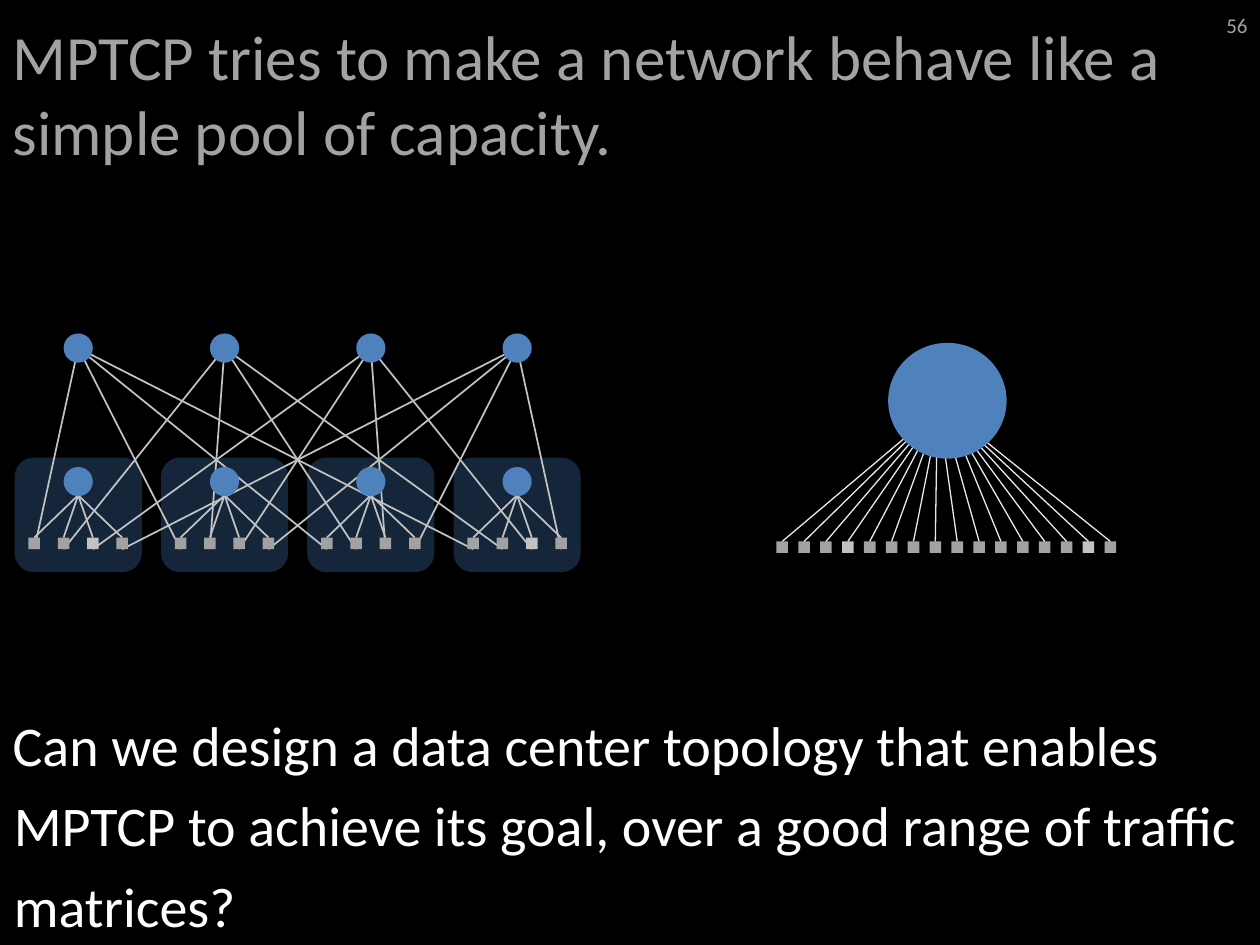
from pptx import Presentation
from pptx.dml.color import RGBColor
from pptx.enum.shapes import MSO_CONNECTOR, MSO_SHAPE
from pptx.enum.text import MSO_ANCHOR, MSO_AUTO_SIZE, PP_ALIGN
from pptx.oxml.ns import qn
from pptx.util import Pt
from lxml.etree import SubElement

# Content
TITLE = "MPTCP tries to make a network behave like a simple pool of capacity."
QUESTION = ("Can we design a data center topology that enables MPTCP to achieve "
            "its goal, over a good range of traffic matrices?")
NUMBER = "56"
PODS = CORES = HOSTS_PER_POD = 4
LIGHT_HOSTS = {(0, 2), (3, 2)}      # pod, host
LIGHT_POOL_HOSTS = {3, 14}
# Where the links of the pool meet: number of links, x, y
POOL_ENDS = [(7, 537.1, 233.3), (2, 535.7, 229), (1, 535.7, 224.6), (6, 541.4, 234.7)]

BLACK = RGBColor(0, 0, 0)
WHITE = RGBColor(0xFF, 0xFF, 0xFF)
GREY = RGBColor(0xA2, 0xA2, 0xA2)
LIGHT = RGBColor(0xC2, 0xC2, 0xC2)
PALE = RGBColor(0xE9, 0xE9, 0xE9)
BLUE = RGBColor(0x4F, 0x81, 0xBD)
NAVY = RGBColor(0x25, 0x40, 0x61)

# Geometry, in points
POD_X, POD_STEP, POD_W, POD_H, POD_Y = 44.7, 83.6, 72.7, 65.5, 294.2
HOST_STEP, HOST_SIZE, HOST_Y = 16.75, 6.6, 310.5
NODE_SIZE, CORE_Y, SWITCH_Y, SWITCH_FOOT = 16.7, 198.9, 275.2, 283
POOL_X, POOL_STEP, POOL_Y = 447, 12.5, 312.7

prs = Presentation()
prs.slide_width, prs.slide_height = Pt(720), Pt(540)
s = prs.slides.add_slide(prs.slide_layouts[1])
s.background.fill.solid()
s.background.fill.fore_color.rgb = BLACK


def write(sp, text, box, size, color, anchor=MSO_ANCHOR.MIDDLE, align=PP_ALIGN.LEFT):
    sp.left, sp.top, sp.width, sp.height = map(Pt, box)
    tf = sp.text_frame
    tf.word_wrap, tf.auto_size, tf.vertical_anchor = True, MSO_AUTO_SIZE.NONE, anchor
    p = tf.paragraphs[0]
    p.alignment = align
    r = p.add_run()
    r.text = text
    r.font.name, r.font.size, r.font.color.rgb = "Calibri", Pt(size), color
    return p


def mark(kind, x, y, w, h, color):
    """Draw a filled shape centred on x, y."""
    sp = s.shapes.add_shape(kind, Pt(x - w / 2), Pt(y - h / 2), Pt(w), Pt(h))
    sp.shadow.inherit = False
    sp.fill.solid()
    sp.fill.fore_color.rgb = color
    sp.line.fill.background()
    return sp


def link(x1, y1, x2, y2, color, width):
    c = s.shapes.add_connector(MSO_CONNECTOR.STRAIGHT, Pt(x1), Pt(y1), Pt(x2), Pt(y2))
    c.line.color.rgb, c.line.width = color, Pt(width)
    SubElement(c._element.spPr, qn("a:effectLst"))


# Title, question and slide number
write(s.shapes.title, TITLE, (0, 0, 720, 106), 36, GREY)
p = write(s.placeholders[1], QUESTION, (0, 349, 720, 191), 32, WHITE, MSO_ANCHOR.BOTTOM)
p.line_spacing, p.space_before = 1.2, Pt(16)
pPr = p._p.get_or_add_pPr()
pPr.set("marL", str(Pt(0.72)))
pPr.set("indent", str(-Pt(0.72)))
SubElement(pPr, qn("a:buNone"))
write(s.shapes.add_textbox(0, 0, 0, 0), NUMBER, (660, 0, 60, 29), 12, GREY,
      align=PP_ALIGN.RIGHT)

# Data center network: pods, links, switches, hosts
pod_x = [POD_X + i * POD_STEP for i in range(PODS)]
core_x = pod_x[:CORES]
hosts = [(pod, h, pod_x[pod] + (h - (HOSTS_PER_POD - 1) / 2) * HOST_STEP)
         for pod in range(PODS) for h in range(HOSTS_PER_POD)]

for x in pod_x:
    sp = mark(MSO_SHAPE.ROUNDED_RECTANGLE, x, POD_Y, POD_W, POD_H, NAVY)
    fill_color = sp._element.spPr.find(qn("a:solidFill"))[0]
    SubElement(fill_color, qn("a:alpha")).set("val", "60000")
for pod, h, x in hosts:
    link(x, HOST_Y - HOST_SIZE / 2, pod_x[pod], SWITCH_FOOT, LIGHT, 1)
    link(x, HOST_Y + HOST_SIZE / 2, core_x[h], CORE_Y, LIGHT, 1)
for y in (SWITCH_Y, CORE_Y):
    for x in pod_x:
        mark(MSO_SHAPE.OVAL, x, y, NODE_SIZE, NODE_SIZE, BLUE)
for pod, h, x in hosts:
    mark(MSO_SHAPE.RECTANGLE, x, HOST_Y, HOST_SIZE, HOST_SIZE,
         LIGHT if (pod, h) in LIGHT_HOSTS else GREY)

# Simple pool of capacity
ends = [(x, y) for count, x, y in POOL_ENDS for _ in range(count)]
for i, (end_x, end_y) in enumerate(ends):
    x = POOL_X + i * POOL_STEP
    mark(MSO_SHAPE.RECTANGLE, x, POOL_Y, HOST_SIZE, HOST_SIZE,
         LIGHT if i in LIGHT_POOL_HOSTS else GREY)
    link(x, POOL_Y - HOST_SIZE / 2, end_x, end_y, PALE, 0.75)
mark(MSO_SHAPE.OVAL, 541.4, 229, 67.7, 66.2, BLUE)

prs.save("out.pptx")
